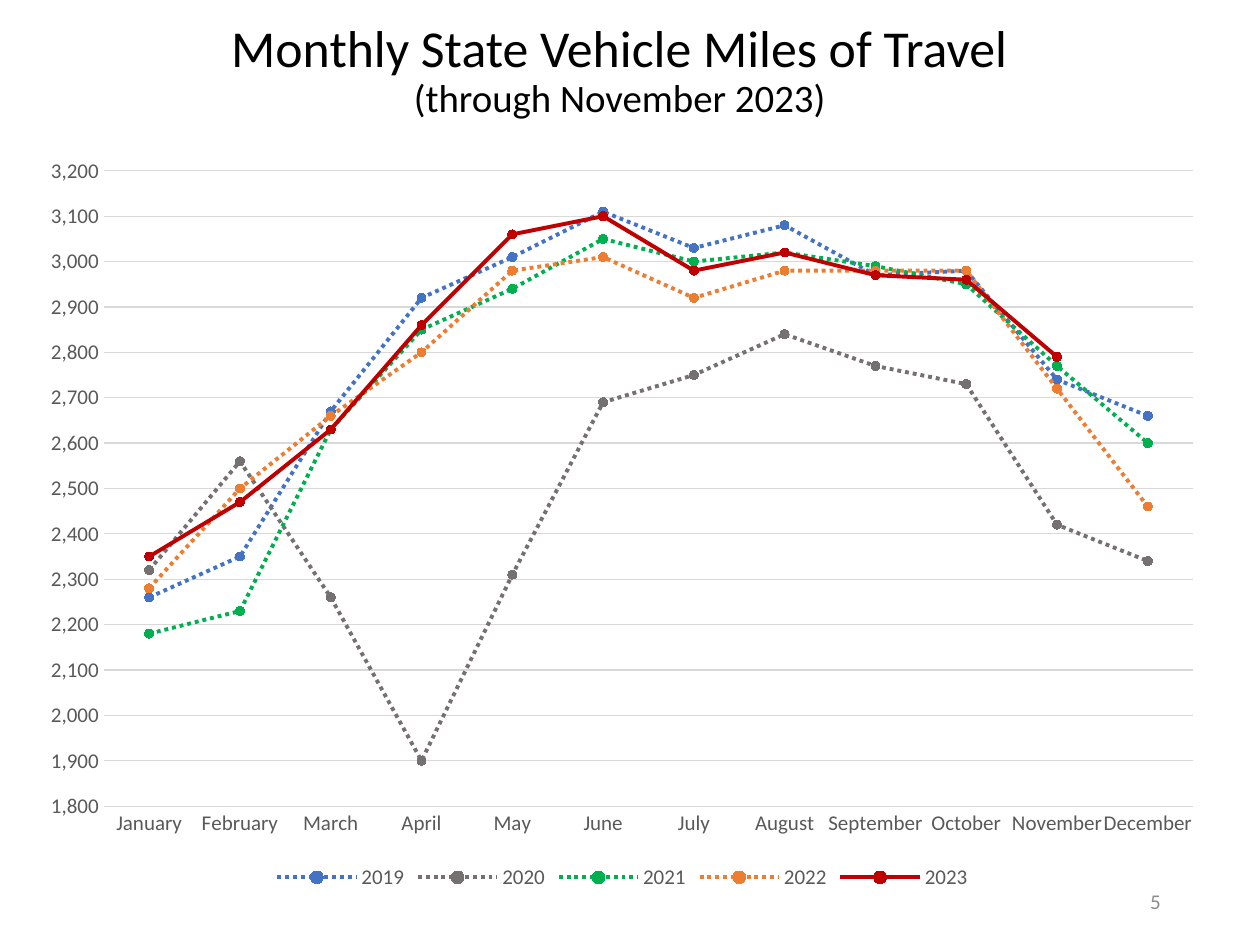
from dataclasses import dataclass

from lxml.etree import SubElement
from pptx import Presentation
from pptx.chart.axis import CategoryAxis, ValueAxis
from pptx.chart.chart import Chart
from pptx.chart.data import CategoryChartData
from pptx.chart.series import LineSeries
from pptx.dml.color import RGBColor
from pptx.enum.chart import XL_CHART_TYPE, XL_LEGEND_POSITION, XL_MARKER_STYLE, XL_TICK_MARK
from pptx.enum.dml import MSO_LINE
from pptx.enum.text import MSO_ANCHOR, PP_ALIGN
from pptx.oxml.ns import qn
from pptx.slide import Slide
from pptx.util import Cm, Pt

FONT = "Calibri"
COLORS = {
    "title": "000000",
    "label": "595959",
    "grid": "D9D9D9",
    "page": "8C8C8C",
    "2019": "4472C4",
    "2020": "767171",
    "2021": "00B050",
    "2022": "ED7D31",
    "2023": "C00000",
}
MONTHS = [
    "January", "February", "March", "April", "May", "June",
    "July", "August", "September", "October", "November", "December",
]
PLOT_LAYOUT = {"x": 0.065, "y": 0.036, "w": 0.914, "h": 0.846}


@dataclass(frozen=True)
class YearOfTravel:
    year: str
    miles: tuple[int | None, ...]
    dotted: bool = True


@dataclass(frozen=True)
class TextLine:
    text: str
    size: float
    color: str


@dataclass(frozen=True)
class Box:
    left: float
    top: float
    width: float
    height: float

    def lengths(self) -> tuple[Cm, Cm, Cm, Cm]:
        return Cm(self.left), Cm(self.top), Cm(self.width), Cm(self.height)


YEARS = [
    YearOfTravel("2019", (2260, 2350, 2670, 2920, 3010, 3110, 3030, 3080, 2970, 2980, 2740, 2660)),
    YearOfTravel("2020", (2320, 2560, 2260, 1900, 2310, 2690, 2750, 2840, 2770, 2730, 2420, 2340)),
    YearOfTravel("2021", (2180, 2230, 2630, 2850, 2940, 3050, 3000, 3020, 2990, 2950, 2770, 2600)),
    YearOfTravel("2022", (2280, 2500, 2660, 2800, 2980, 3010, 2920, 2980, 2980, 2980, 2720, 2460)),
    YearOfTravel("2023", (2350, 2470, 2630, 2860, 3060, 3100, 2980, 3020, 2970, 2960, 2790, None), False),
]


def rgb(name: str) -> RGBColor:
    return RGBColor.from_string(COLORS[name])


def add_text(slide: Slide, box: Box, lines: list[TextLine], align: PP_ALIGN,
             anchor: MSO_ANCHOR, spacing: float = 1.0) -> None:
    frame = slide.shapes.add_textbox(*box.lengths()).text_frame
    frame.word_wrap = True
    frame.vertical_anchor = anchor
    frame.text = "\n".join(line.text for line in lines)
    for paragraph, line in zip(frame.paragraphs, lines):
        paragraph.alignment = align
        paragraph.line_spacing = spacing
        font = paragraph.runs[0].font
        font.name, font.size = FONT, Pt(line.size)
        font.color.rgb = rgb(line.color)


def style_labels(part) -> None:
    part.font.name, part.font.size = FONT, Pt(12)
    part.font.color.rgb = rgb("label")


def style_axis(axis: CategoryAxis | ValueAxis) -> None:
    axis.major_tick_mark = axis.minor_tick_mark = XL_TICK_MARK.NONE
    style_labels(axis.tick_labels)


def style_year(series: LineSeries, travel: YearOfTravel) -> None:
    color = rgb(travel.year)
    series.smooth = False
    series.format.line.width = Pt(2.25)
    series.format.line.color.rgb = color
    if travel.dotted:
        series.format.line.dash_style = MSO_LINE.ROUND_DOT
    marker = series.marker
    marker.style, marker.size = XL_MARKER_STYLE.CIRCLE, 5
    marker.format.fill.solid()
    marker.format.fill.fore_color.rgb = color
    marker.format.line.color.rgb = color


def place_plot(chart: Chart) -> None:
    plot_area = chart.element.find(f".//{qn('c:plotArea')}")
    layout = plot_area.find(qn("c:layout"))
    if layout is None:
        layout = SubElement(plot_area, qn("c:layout"))
        plot_area.insert(0, layout)
    manual = SubElement(layout, qn("c:manualLayout"))
    settings = {"layoutTarget": "inner", "xMode": "edge", "yMode": "edge", **PLOT_LAYOUT}
    for tag, value in settings.items():
        SubElement(manual, qn(f"c:{tag}")).set("val", str(value))


def add_travel_chart(slide: Slide, box: Box) -> None:
    data = CategoryChartData(number_format="#,##0")
    data.categories = MONTHS
    for travel in YEARS:
        data.add_series(travel.year, travel.miles)
    chart = slide.shapes.add_chart(XL_CHART_TYPE.LINE_MARKERS, *box.lengths(), data).chart
    chart.has_title = False
    chart.font.name, chart.font.size = FONT, Pt(10)
    plot = chart.plots[0]
    plot.vary_by_categories = False
    for series, travel in zip(plot.series, YEARS):
        style_year(series, travel)

    months, miles = chart.category_axis, chart.value_axis
    style_axis(months)
    style_axis(miles)
    months.format.line.color.rgb = rgb("grid")
    months.format.line.width = Pt(0.75)
    months_body = months._element.find(f"{qn('c:txPr')}/{qn('a:bodyPr')}")
    months_body.set("rot", "-60000000")
    miles.minimum_scale, miles.maximum_scale, miles.major_unit = 1800, 3200, 100
    miles.tick_labels.number_format = "#,##0"
    miles.tick_labels.number_format_is_linked = False
    miles.format.line.fill.background()
    miles.major_gridlines.format.line.color.rgb = rgb("grid")
    miles.major_gridlines.format.line.width = Pt(0.75)

    chart.has_legend = True
    chart.legend.position = XL_LEGEND_POSITION.BOTTOM
    chart.legend.include_in_layout = False
    style_labels(chart.legend)
    place_plot(chart)


def main() -> None:
    """Build the monthly vehicle miles of travel slide."""
    deck = Presentation()
    deck.slide_width, deck.slide_height = Cm(25.4), Cm(19.05)
    slide = deck.slides.add_slide(deck.slide_layouts[6])
    add_travel_chart(slide, Box(0.53, 2.9, 24.03, 15.14))
    add_text(slide, Box(17.93, 17.65, 5.72, 1.02), [TextLine("5", 12, "page")],
             PP_ALIGN.RIGHT, MSO_ANCHOR.MIDDLE)
    heading = [
        TextLine("Monthly State Vehicle Miles of Travel", 29.6, "title"),
        TextLine("(through November 2023)", 22.2, "title"),
    ]
    add_text(slide, Box(1.55, 0.2, 21.89, 2.36), heading,
             PP_ALIGN.CENTER, MSO_ANCHOR.BOTTOM, 0.9)
    deck.save("out.pptx")


if __name__ == "__main__":
    main()
